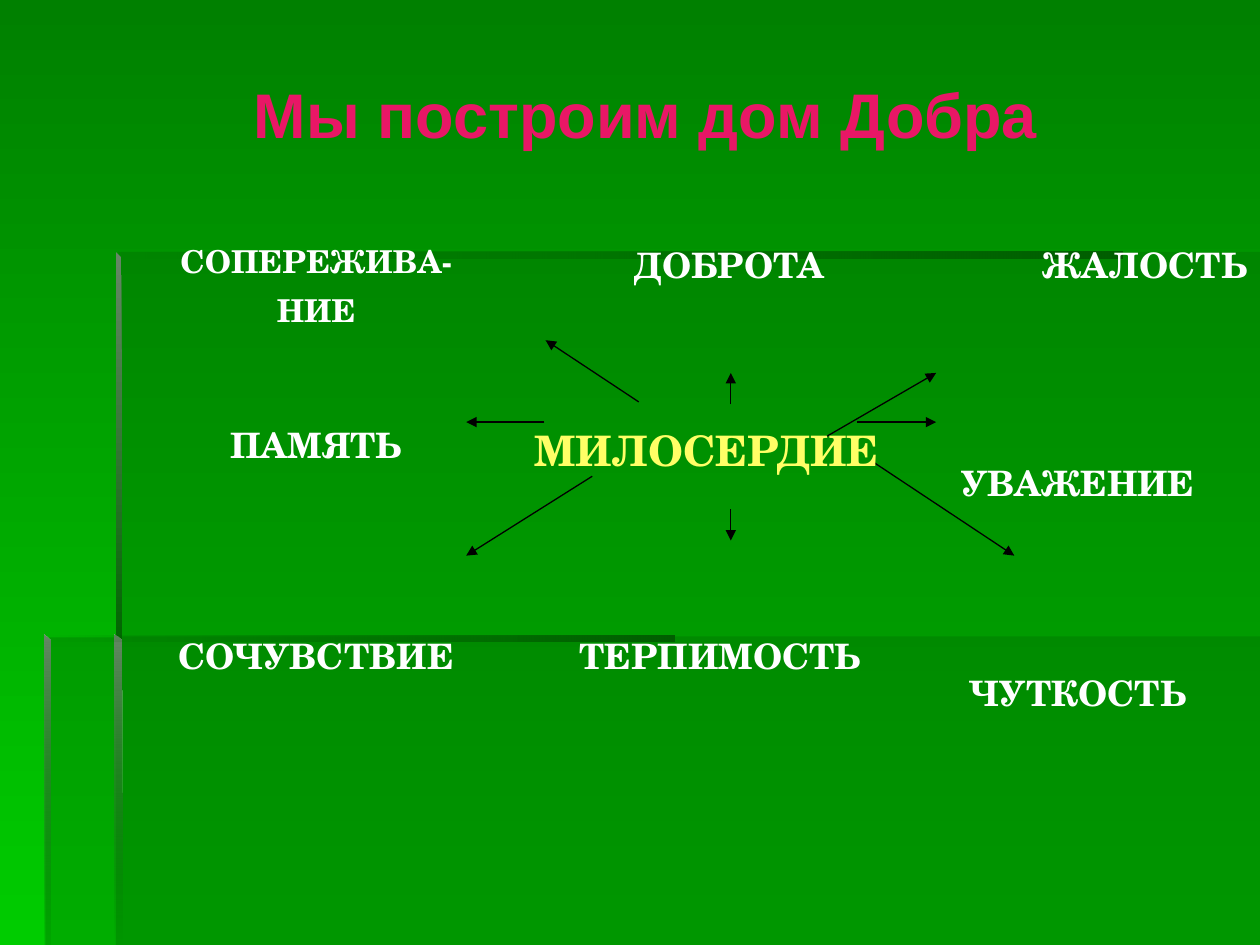
"""Build the "House of Kindness" slide: a table of virtues linked by arrows."""
from lxml.etree import SubElement
from pptx import Presentation
from pptx.dml.color import RGBColor as RGB
from pptx.enum.shapes import MSO_CONNECTOR as CONN
from pptx.enum.text import MSO_ANCHOR as ANCHOR, PP_ALIGN as AL
from pptx.oxml.ns import qn
from pptx.util import Cm, Pt

THEME = {
    "title": {"name": "Arial", "size": Pt(36), "bold": True, "color": "E81766"},
    "long": {"name": "TeX Gyre Schola", "size": Pt(18), "bold": True, "color": "FFFFFF"},
    "word": {"name": "TeX Gyre Schola", "size": Pt(20), "bold": True, "color": "FFFFFF"},
    "core": {"name": "TeX Gyre Schola", "size": Pt(24), "bold": True, "color": "FFFF66"},
    "panel": "006600",
    "arrow": "000000",
    "no_style": "{2D5ABB26-0587-4C30-8999-92F81FD0307C}",
}
TITLE = "Мы построим дом Добра"
BACKGROUND = [(0, "008000", 100), (100, "00CC00", 100)]
PANEL = [(0, THEME["panel"], 30), (100, THEME["panel"], 30)]
EDGE_ACROSS = [(0, "006600", 0), (100, "005E00", 100)]
EDGE_DOWN = [(0, "668666", 100), (100, "006600", 100)]
EDGE_FADE = [(0, "668666", 100), (100, "006600", 0)]
EDGE_FAINT = [(0, "668666", 100), (100, "006600", 10)]

FREEFORMS = [
    ([(0.92, 5.05), (0.92, 7.5), (10, 7.5), (10, 5.05)], PANEL, 0),
    ([(0.94, 5.06), (0.36, 5.06), (0.36, 7.5), (10, 7.5), (10, 2), (0.94, 2)], PANEL, 0),
    ([(0.92, 2), (0.92, 2.05), (8.91, 2.05), (8.91, 2)], EDGE_ACROSS, 0),
    ([(0.92, 2), (0.92, 5.1), (0.97, 5.1), (0.96, 2.04)], EDGE_DOWN, 90),
    ([(0.91, 7.5), (0.97, 7.5), (0.96, 5.08), (0.91, 5.04)], EDGE_FADE, 90),
    ([(0.35, 5.04), (0.35, 5.09), (5.35, 5.09), (5.35, 5.04)], EDGE_ACROSS, 0),
    ([(0.35, 5.04), (0.35, 7.5), (0.4, 7.5), (0.4, 5.09)], EDGE_FAINT, 90),
]
ARROWS = [
    ((6.55, 3.47), (7.43, 2.96)), ((5.07, 3.19), (4.33, 2.7)),
    ((5.8, 3.21), (5.8, 2.96)), ((5.8, 4.04), (5.8, 4.29)),
    ((4.7, 3.78), (3.7, 4.41)), ((6.92, 3.66), (8.05, 4.41)),
    ((6.8, 3.35), (7.43, 3.35)), ((4.32, 3.35), (3.7, 3.35)),
]
COLUMNS = [2.68, 3.26, 2.89]
ROWS = [0.86, 0.56, 0.83, 0.84, 0.83]
WORDS = [
    (0, 0, ["СОПЕРЕЖИВА-", "НИЕ"], "long", AL.CENTER, 0, 0),
    (0, 1, ["ДОБРОТА"], "word", AL.CENTER, 0.62, 0),
    (0, 2, ["ЖАЛОСТЬ"], "word", AL.RIGHT, 0, 0),
    (2, 0, ["ПАМЯТЬ"], "word", AL.CENTER, 0, 0),
    (2, 1, ["МИЛОСЕРДИЕ"], "core", AL.CENTER, 0.26, 0),
    (2, 2, ["УВАЖЕНИЕ"], "word", AL.CENTER, 0, 0.3),
    (4, 0, ["СОЧУВСТВИЕ"], "word", AL.CENTER, 0, 0),
    (4, 1, ["ТЕРПИМОСТЬ"], "word", AL.CENTER, 0.47, 0),
    (4, 2, ["ЧУТКОСТЬ"], "word", AL.CENTER, 0, 0.3),
]


def inch(value):
    """Convert slide inches to a length."""
    return Cm(value * 2.54)


def write(p, text, style, align):
    """Put one styled run into a paragraph."""
    p.alignment = align
    r = p.add_run()
    r.text = text
    for key, value in THEME[style].items():
        if key == "color":
            r.font.color.rgb = RGB.from_string(value)
        else:
            setattr(r.font, key, value)


def set_gradient(fill, stops, angle):
    """Fill with two colour stops, each with its opacity in percent."""
    fill.gradient()
    fill.gradient_angle = -angle % 360
    for stop, (position, color, opacity) in zip(fill.gradient_stops, stops):
        stop.position = position / 100
        stop.color.rgb = RGB.from_string(color)
        if opacity < 100:
            clr = stop._gs.find(qn("a:srgbClr"))
            SubElement(clr, qn("a:alpha")).set("val", str(opacity * 1000))


def add_panel(s, points, stops, angle):
    """Draw one closed outline of the backdrop."""
    points = [(inch(x), inch(y)) for x, y in points]
    builder = s.shapes.build_freeform(*points[0])
    builder.add_line_segments(points[1:], close=True)
    sp = builder.convert_to_shape()
    sp.shadow.inherit = False
    sp.line.fill.background()
    if stops is PANEL:
        sp.fill.solid()
        sp.fill.fore_color.rgb = RGB.from_string(THEME["panel"])
        clr = sp._element.spPr.find(qn("a:solidFill"))[0]
        SubElement(clr, qn("a:alpha")).set("val", str(stops[0][2] * 1000))
    else:
        set_gradient(sp.fill, stops, angle)


def add_arrow(s, start, end):
    """Draw a thin line with a triangle at its end."""
    c = s.shapes.add_connector(CONN.STRAIGHT, *map(inch, start + end))
    c.line.width = Pt(0.75)
    c.line.color.rgb = RGB.from_string(THEME["arrow"])
    SubElement(c.line._get_or_add_ln(), qn("a:tailEnd")).set("type", "triangle")
    SubElement(c._element.spPr, qn("a:effectLst"))


def add_words(s):
    """Lay the virtues out in an unstyled table."""
    frame = s.shapes.add_table(len(ROWS), len(COLUMNS), inch(1.17), inch(1.83),
                               inch(sum(COLUMNS)), inch(sum(ROWS)))
    table = frame.table
    table.first_row = table.horz_banding = False
    table._tbl.tblPr.find(qn("a:tableStyleId")).text = THEME["no_style"]
    for column, width in zip(table.columns, COLUMNS):
        column.width = inch(width)
    for row, height in zip(table.rows, ROWS):
        row.height = inch(height)
    for cell in table.iter_cells():
        cell.fill.background()
    for row, column, lines, style, align, indent, drop in WORDS:
        cell = table.cell(row, column)
        cell.margin_left = inch(0.1 + indent)
        cell.margin_top = inch(0.05 + drop)
        tf = cell.text_frame
        for i, line in enumerate(lines):
            p = tf.add_paragraph() if i else tf.paragraphs[0]
            write(p, line, style, align)


def add_title(s):
    """Place and format the title placeholder."""
    sp = s.shapes.title
    box = {"left": 1, "top": 0.5, "width": 8.25, "height": 1}
    for key, value in box.items():
        setattr(sp, key, inch(value))
    tf = sp.text_frame
    tf.vertical_anchor = ANCHOR.TOP
    tf.margin_top = inch(0.1)
    write(tf.paragraphs[0], TITLE, "title", AL.CENTER)


def main():
    """Build and save the slide."""
    prs = Presentation()
    prs.slide_width, prs.slide_height = inch(10), inch(7.5)
    s = prs.slides.add_slide(prs.slide_layouts[5])
    set_gradient(s.background.fill, BACKGROUND, 90)
    for panel in FREEFORMS:
        add_panel(s, *panel)
    for start, end in ARROWS:
        add_arrow(s, start, end)
    add_words(s)
    add_title(s)
    prs.save("out.pptx")


if __name__ == "__main__":
    main()
